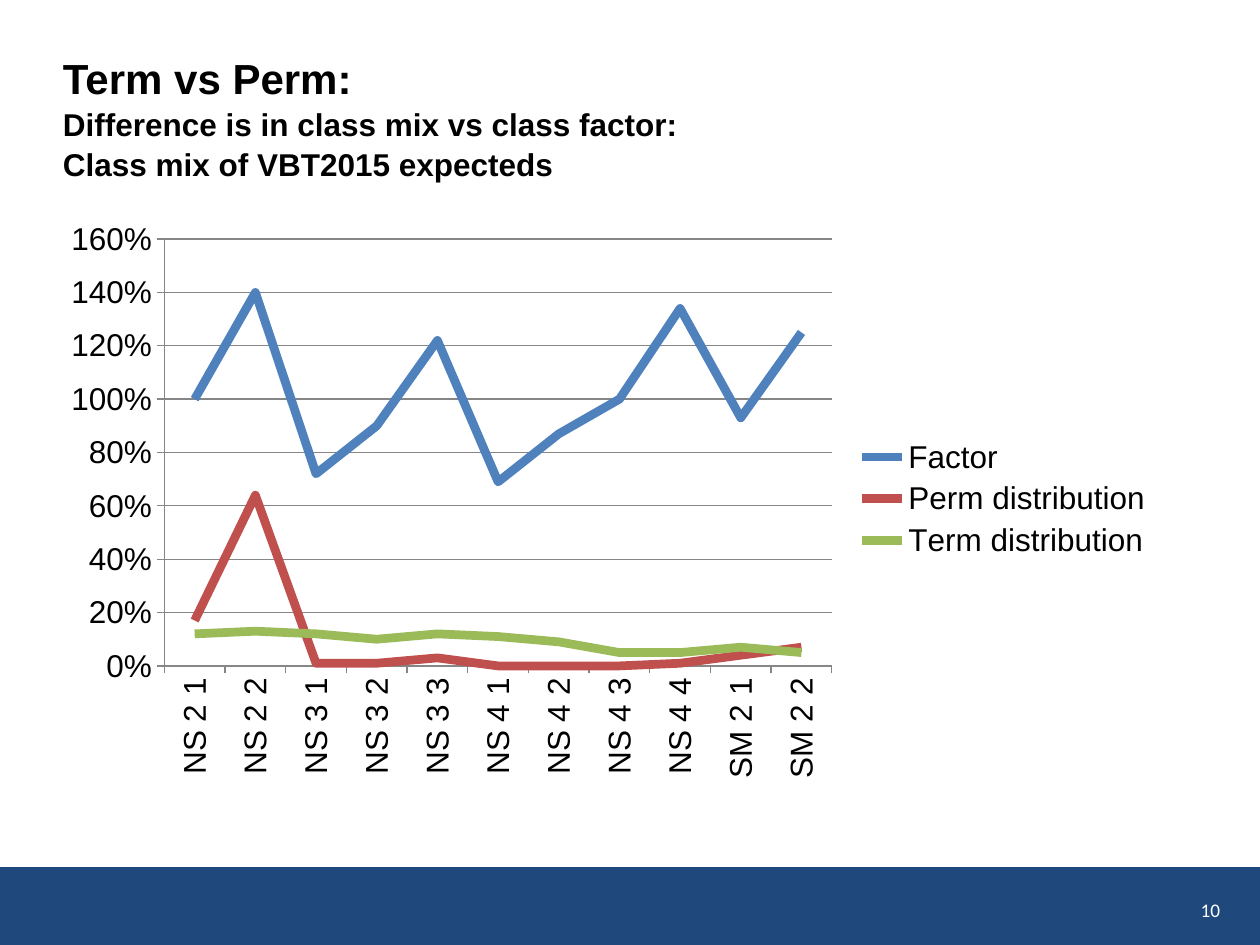
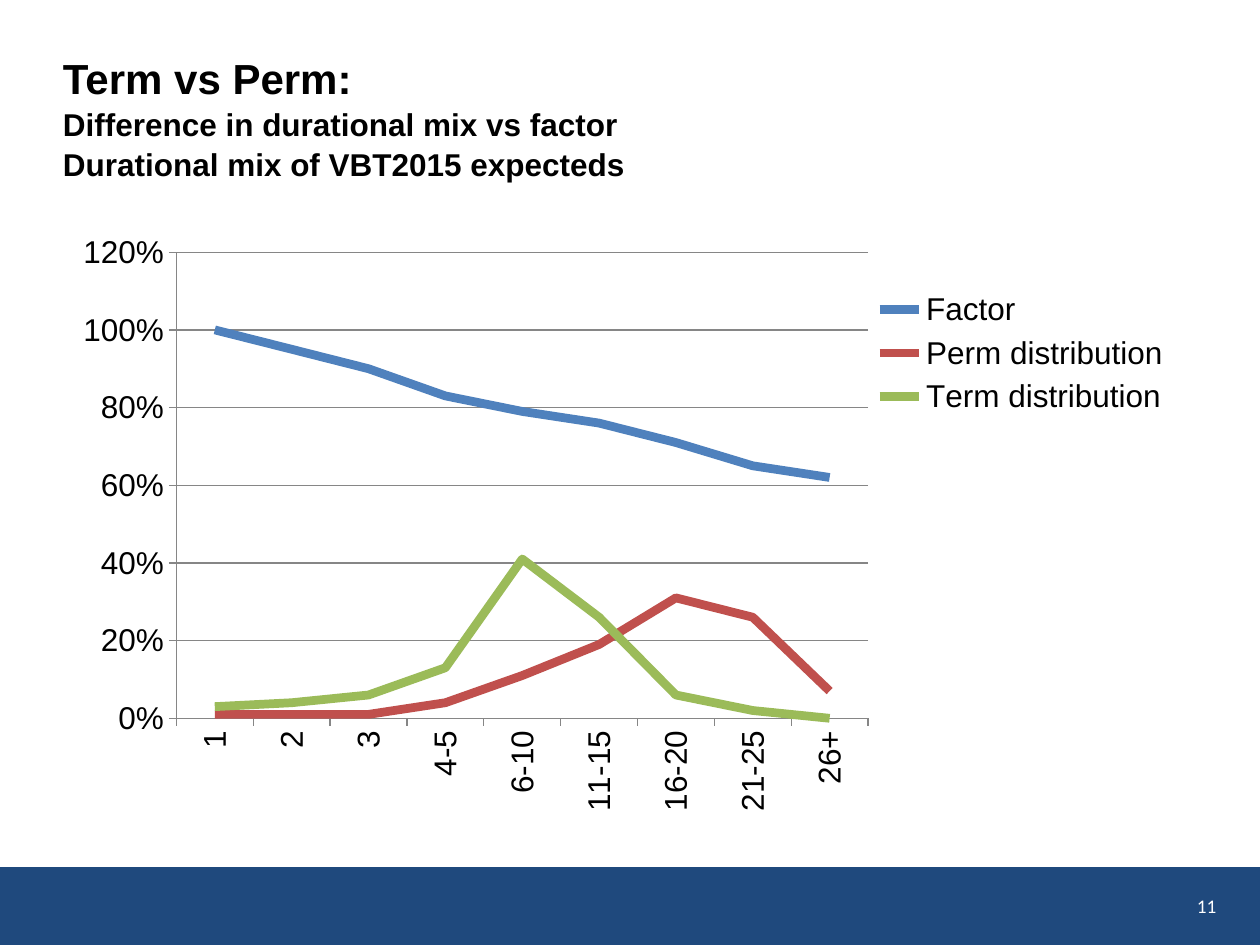
from dataclasses import dataclass
from typing import Optional

from lxml import etree
from pptx import Presentation
from pptx import util as u
from pptx.chart import data as cd
from pptx.dml.color import RGBColor
from pptx.enum import chart as ce, shapes, text
from pptx.oxml import ns

# Shared look
NAVY = RGBColor(0x1F, 0x49, 0x7D)
WHITE = RGBColor(0xFF, 0xFF, 0xFF)
BLACK = RGBColor(0, 0, 0)
GREY = RGBColor(0x86, 0x86, 0x86)
BLUE = RGBColor(0x4F, 0x81, 0xBD)
RED = RGBColor(0xC0, 0x50, 0x4D)
GREEN = RGBColor(0x9B, 0xBB, 0x59)
WIDE, HIGH, BAND = 25.4, 19.05, 17.48
SERIES = (("Factor", BLUE), ("Perm distribution", RED),
          ("Term distribution", GREEN))

Box = tuple[float, float, float, float]


@dataclass(frozen=True)
class Page:
    number: int
    lines: tuple[str, ...]
    chart: Box          # in cm
    plot: Box           # share of the chart
    cats: tuple[str, ...]
    values: tuple[tuple[float, ...], ...]
    top: float          # highest tick of the value axis
    corner: tuple[float, float]
    legend: Optional[Box] = None


PAGES = (
    Page(10,
         ("Term vs Perm:", "Difference is in class mix vs class factor:",
          "Class mix of VBT2015 expecteds"),
         (1.07, 4.24, 22.43, 11.63), (0.1, 0.05, 0.6, 0.74),
         ("NS 2 1", "NS 2 2", "NS 3 1", "NS 3 2", "NS 3 3", "NS 4 1",
          "NS 4 2", "NS 4 3", "NS 4 4", "SM 2 1", "SM 2 2"),
         ((1, 1.4, 0.72, 0.9, 1.22, 0.69, 0.87, 1, 1.34, 0.93, 1.25),
          (0.17, 0.64, 0.01, 0.01, 0.03, 0, 0, 0, 0.01, 0.04, 0.07),
          (0.12, 0.13, 0.12, 0.1, 0.12, 0.11, 0.09, 0.05, 0.05, 0.07, 0.05)),
         1.6, (23.5, 18.06)),
    Page(11,
         ("Term vs Perm:", "Difference in durational mix vs factor",
          "Durational mix of VBT2015 expecteds"),
         (1.27, 4.45, 22.86, 12.7), (0.1, 0.05, 0.61, 0.74),
         ("1", "2", "3", "4-5", "6-10", "11-15", "16-20", "21-25", "26+"),
         ((1, 0.95, 0.9, 0.83, 0.79, 0.76, 0.71, 0.65, 0.62),
          (0.01, 0.01, 0.01, 0.04, 0.11, 0.19, 0.31, 0.26, 0.07),
          (0.03, 0.04, 0.06, 0.13, 0.41, 0.26, 0.06, 0.02, 0)),
         1.2, (23.42, 17.98), (0.71, 0.1, 0.27, 0.22)),
)


def cm(box: Box) -> list[u.Cm]:
    return [u.Cm(n) for n in box]


def style(font, size: float, color: RGBColor, face: str = "Arial",
          bold: bool = False) -> None:
    font.size, font.name, font.bold = u.Pt(size), face, bold
    font.color.rgb = color


def frame(slide, box: Box, inset: tuple[float, float] = (0, 0)):
    """Add a wrapped text box, centred in height."""
    area = slide.shapes.add_textbox(*cm(box)).text_frame
    area.word_wrap = True
    area.vertical_anchor = text.MSO_ANCHOR.MIDDLE
    area.margin_left = area.margin_right = u.Cm(inset[0])
    area.margin_top = area.margin_bottom = u.Cm(inset[1])
    return area


def add_band(slide) -> None:
    band = slide.shapes.add_shape(shapes.MSO_SHAPE.RECTANGLE,
                                  *cm((0, BAND, WIDE, HIGH - BAND)))
    band.shadow.inherit = False
    band.fill.solid()
    band.fill.fore_color.rgb = NAVY
    band.line.fill.background()


def add_title(slide, lines: tuple[str, ...]) -> None:
    para = frame(slide, (1.27, 0.76, 22.86, 3.18)).paragraphs[0]
    para.line_spacing = 1.05
    for i, line in enumerate(lines):
        if i:
            para.add_line_break()
        run = para.add_run()
        run.text = line
        style(run.font, 18 if i else 24, BLACK, bold=True)


def add_number(slide, page: Page) -> None:
    para = frame(slide, (*page.corner, 1.35, 0.56), (0.25, 0.13)).paragraphs[0]
    para.alignment = text.PP_ALIGN.RIGHT
    run = para.add_run()
    run.text = str(page.number)
    style(run.font, 11, WHITE, "Calibri")


def place(part, index: int, box: Box, inner: bool = False) -> None:
    """Fix the place of a chart part by shares of the chart."""
    for old in part.findall(ns.qn("c:layout")):
        part.remove(old)
    lay = etree.Element(ns.qn("c:layout"))
    part.insert(index, lay)
    man = etree.SubElement(lay, ns.qn("c:manualLayout"))
    rules = [("layoutTarget", "inner")] if inner else []
    rules += [("xMode", "edge"), ("yMode", "edge")]
    rules += zip("xywh", map(str, box))
    for tag, val in rules:
        etree.SubElement(man, ns.qn("c:" + tag)).set("val", val)


def add_chart(slide, page: Page) -> None:
    data = cd.CategoryChartData(number_format="0%")
    data.categories = page.cats
    for (name, _), row in zip(SERIES, page.values):
        data.add_series(name, row)
    chart = slide.shapes.add_chart(ce.XL_CHART_TYPE.LINE, *cm(page.chart),
                                   data).chart
    chart.has_title = False
    style(chart.font, 18, BLACK)

    # Lines
    plot = chart.plots[0]
    plot.vary_by_categories = False
    for line, (_, color) in zip(plot.series, SERIES):
        line.smooth = False
        line.marker.style = ce.XL_MARKER_STYLE.NONE
        line.format.line.width = u.Pt(5)
        line.format.line.color.rgb = color

    # Axes
    cat, val = chart.category_axis, chart.value_axis
    val.minimum_scale, val.maximum_scale, val.major_unit = 0, page.top, 0.2
    val.has_major_gridlines = True
    val.tick_labels.number_format = "0%"
    val.tick_labels.number_format_is_linked = False
    for axis in (cat, val):
        axis.major_tick_mark = ce.XL_TICK_MARK.OUTSIDE
        axis.minor_tick_mark = ce.XL_TICK_MARK.NONE
        style(axis.tick_labels.font, 18, BLACK)
    for rule in (cat, val, val.major_gridlines):
        rule.format.line.width = u.Pt(0.75)
        rule.format.line.color.rgb = GREY
    turn = cat._element.find(ns.qn("c:txPr")).find(ns.qn("a:bodyPr"))
    turn.set("rot", "-5400000")
    turn.set("vert", "horz")

    # Legend and plot area
    chart.has_legend = True
    key = chart.legend
    key.position = ce.XL_LEGEND_POSITION.RIGHT
    key.include_in_layout = False
    style(key.font, 18, BLACK)
    place(chart.element.xpath("//c:plotArea")[0], 0, page.plot, True)
    if page.legend:
        place(key._element, 1, page.legend)


def main() -> None:
    deck = Presentation()
    deck.slide_width, deck.slide_height = u.Cm(WIDE), u.Cm(HIGH)
    for page in PAGES:
        slide = deck.slides.add_slide(deck.slide_layouts[6])
        add_band(slide)
        add_title(slide, page.lines)
        add_chart(slide, page)
        add_number(slide, page)
    deck.save("out.pptx")


if __name__ == "__main__":
    main()
